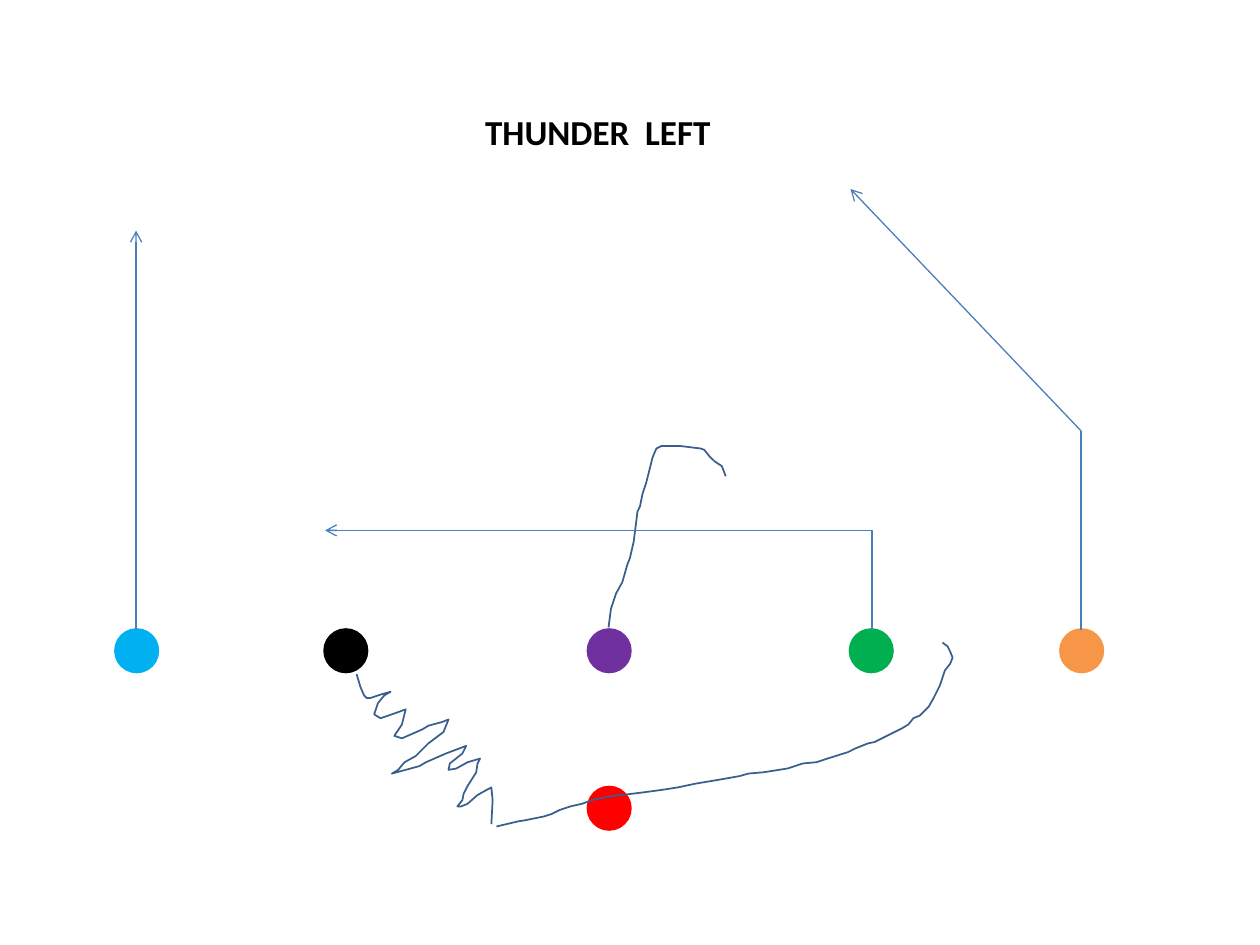
"""Draw the Thunder Left play: players, straight routes and hand-drawn runs."""
from lxml.etree import SubElement
from pptx import Presentation
from pptx.dml.color import RGBColor
from pptx.enum.shapes import MSO_CONNECTOR, MSO_SHAPE
from pptx.enum.text import MSO_ANCHOR, MSO_AUTO_SIZE, PP_ALIGN
from pptx.oxml.ns import qn
from pptx.util import Pt

PX = 9144
WIDTH, HEIGHT = 1000, 750
SIZE = 33
ROUTE, RUN = "4B7EBC", "3A5F8C"

TITLE = "THUNDER  LEFT"
TITLE_BOX = (375, 83, 200, 44)

PLAYERS = [
    (467, 500, "7030A0"),
    (675, 500, "00B050"),
    (842, 500, "F79646"),
    (258, 500, "000000"),
    (92, 500, "00B0F0"),
    (467, 625, "FF0000"),
]

LINES = [
    ((108, 500), (108, 183), True),
    ((858, 500), (858, 342), False),
    ((858, 342), (675, 150), True),
]
CROSS = ((692, 500), (258, 421))

HOOK = [
    (483, 498), (485, 483), (489, 471), (494, 462), (498, 448), (500, 443),
    (503, 430), (506, 406), (508, 402), (510, 392), (513, 383), (516, 371),
    (518, 363), (521, 356), (525, 354), (540, 354), (556, 356), (559, 357),
    (563, 362), (567, 366), (573, 370), (576, 378),
]
ZIGZAG = [
    (283, 535), (286, 545), (289, 552), (291, 554), (294, 554), (303, 551),
    (310, 549), (305, 552), (300, 558), (297, 567), (302, 570), (311, 567),
    (322, 563), (319, 575), (313, 584), (319, 586), (335, 579), (340, 576),
    (351, 573), (356, 571), (352, 581), (348, 584), (340, 590), (330, 600),
    (321, 605), (316, 611), (311, 614), (333, 608), (338, 605), (354, 598),
    (370, 592), (367, 598), (362, 602), (357, 606), (356, 611), (362, 610),
    (371, 605), (381, 602), (379, 606), (378, 613), (371, 624), (368, 630),
    (367, 635), (363, 640), (366, 640), (371, 638), (379, 631), (386, 627),
    (390, 625), (391, 635), (390, 654),
]
SWEEP = [
    (394, 656), (411, 652), (417, 651), (432, 648), (438, 646), (444, 643),
    (453, 640), (462, 638), (470, 635), (485, 632), (502, 630), (510, 629),
    (525, 627), (538, 625), (552, 622), (570, 619), (587, 616), (594, 614),
    (606, 613), (625, 610), (637, 606), (648, 605), (657, 602), (673, 597),
    (679, 594), (689, 590), (694, 589), (706, 583), (716, 578), (721, 575),
    (725, 570), (730, 568), (737, 561), (741, 554), (746, 544), (748, 538),
    (750, 532), (754, 527), (756, 522), (754, 517), (752, 513), (748, 510),
]


def px(*vals):
    return [round(val * PX) for val in vals]


def ink(hue):
    return RGBColor.from_string(hue)


def stroke(line, hue, width):
    line.color.rgb = ink(hue)
    line.width = Pt(width)


def add_title(slide):
    title = slide.shapes.title
    title.left, title.top, title.width, title.height = px(*TITLE_BOX)
    frame = title.text_frame
    frame.text = TITLE
    frame.word_wrap = False
    frame.auto_size = MSO_AUTO_SIZE.SHAPE_TO_FIT_TEXT
    frame.vertical_anchor = MSO_ANCHOR.TOP
    para = frame.paragraphs[0]
    para.alignment = PP_ALIGN.LEFT
    font = para.font
    font.name, font.size, font.bold = "Calibri", Pt(20), True
    font.color.rgb = ink("000000")


def add_player(slide, left, top, hue):
    dot = slide.shapes.add_shape(MSO_SHAPE.OVAL, *px(left, top, SIZE, SIZE))
    dot.shadow.inherit = False
    dot.fill.solid()
    dot.fill.fore_color.rgb = ink(hue)
    stroke(dot.line, hue, 2)


def add_line(slide, start, end, arrow, kind=MSO_CONNECTOR.STRAIGHT):
    link = slide.shapes.add_connector(kind, *px(*start, *end))
    stroke(link.line, ROUTE, 0.75)
    props = link._element.spPr
    if arrow:
        SubElement(props.find(qn("a:ln")), qn("a:tailEnd"), type="arrow")
    SubElement(props, qn("a:effectLst"))
    return link


def add_cross(slide, start, end):
    (x1, y1), (x2, y2) = start, end
    midx, midy = (x1 + x2) / 2, (y1 + y2) / 2
    dx, dy = abs(x2 - x1) / 2, abs(y2 - y1) / 2
    link = add_line(slide, (midx - dy, midy + dx), (midx + dy, midy - dx),
                    True, MSO_CONNECTOR.ELBOW)
    props = link._element.spPr
    props.find(qn("a:xfrm")).set("rot", str(270 * 60000))
    props.find(qn("a:prstGeom")).set("prst", "bentConnector2")


def add_run(slide, points):
    pen = slide.shapes.build_freeform(*points[0], scale=PX)
    pen.add_line_segments(points[1:], close=False)
    run = pen.convert_to_shape()
    run.shadow.inherit = False
    run.fill.background()
    stroke(run.line, RUN, 1)


def main():
    deck = Presentation()
    deck.slide_width, deck.slide_height = px(WIDTH, HEIGHT)
    slide = deck.slides.add_slide(deck.slide_layouts[5])
    add_title(slide)
    for player in PLAYERS:
        add_player(slide, *player)
    for line in LINES:
        add_line(slide, *line)
    add_run(slide, HOOK)
    add_cross(slide, *CROSS)
    for points in (ZIGZAG, SWEEP):
        add_run(slide, points)
    deck.save("out.pptx")


if __name__ == "__main__":
    main()
